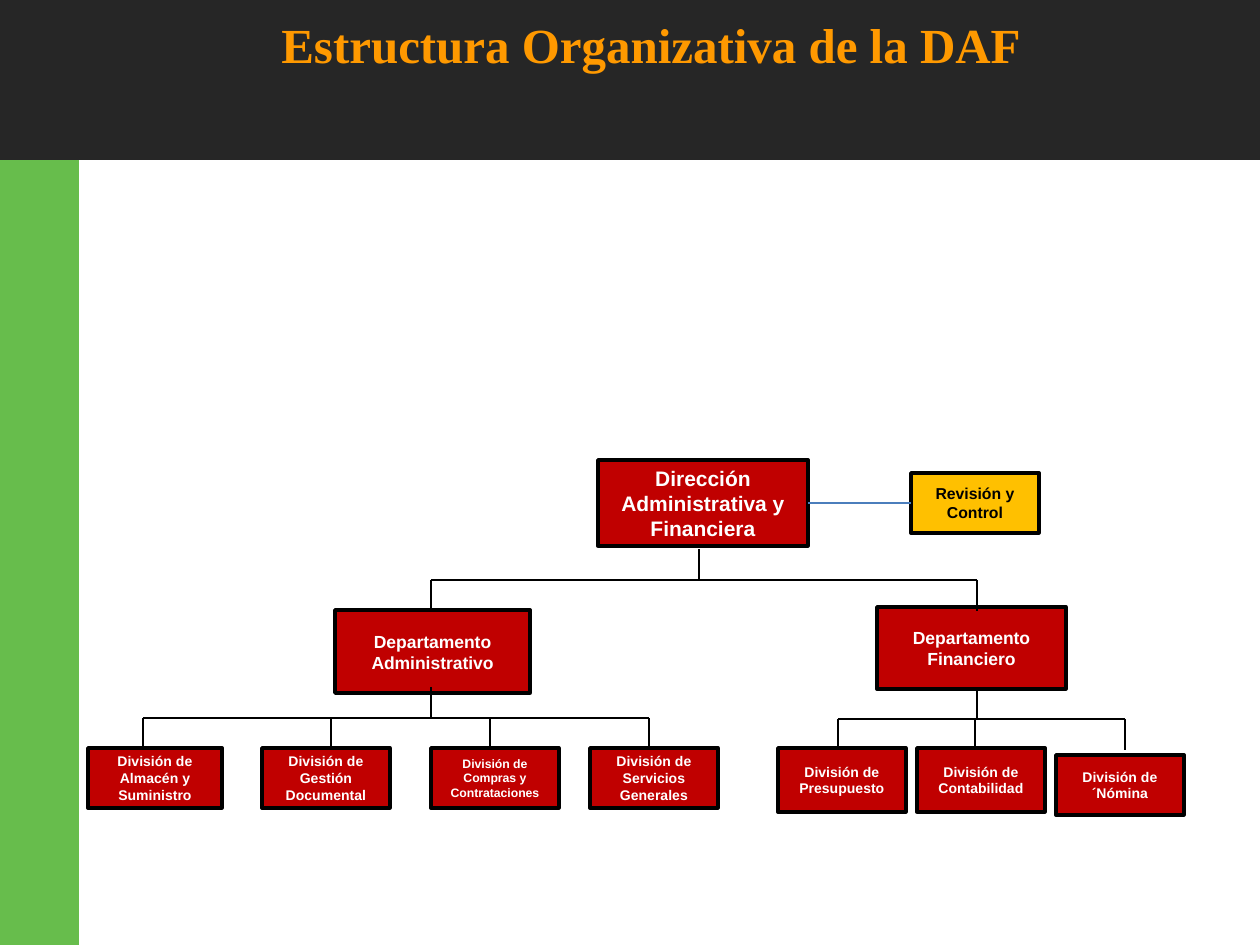
from lxml.etree import SubElement
from pptx import Presentation
from pptx.dml.color import RGBColor
from pptx.enum.shapes import MSO_CONNECTOR as Connector, MSO_SHAPE as Shape
from pptx.enum.text import MSO_ANCHOR as Anchor, MSO_AUTO_SIZE as AutoSize, PP_ALIGN as Align
from pptx.oxml.ns import qn
from pptx.util import Pt

EMU_PER_PX = 914400 / 126
WIDTH, HEIGHT = 1260, 945
TITLE_ONLY = 5
RED, AMBER, BLACK, WHITE = "C00000", "FFC000", "000000", "FFFFFF"


def px(value):
    return round(value * EMU_PER_PX)


def color(hex_string):
    return RGBColor.from_string(hex_string)


def write(frame, text, size, font="Arial", ink=WHITE, anchor=Anchor.MIDDLE, spacing=1.0):
    frame.word_wrap = True
    frame.auto_size = AutoSize.NONE
    frame.vertical_anchor = anchor
    paragraph = frame.paragraphs[0]
    paragraph.alignment = Align.CENTER
    paragraph.line_spacing = spacing
    run = paragraph.add_run()
    run.text = text
    run.font.name = font
    run.font.size = Pt(size)
    run.font.bold = True
    run.font.color.rgb = color(ink)


class OrgChart:
    """Holds the chart style and the slide being drawn on."""

    border_width = Pt(2)
    line_width = Pt(0.75)
    stem_height = 31

    def __init__(self, slide):
        self.slide = slide

    def band(self, left, top, width, height, fill):
        shape = self.slide.shapes.add_shape(
            Shape.RECTANGLE, px(left), px(top), px(width), px(height))
        shape.shadow.inherit = False
        shape.fill.solid()
        shape.fill.fore_color.rgb = color(fill)
        shape.line.fill.background()
        return shape

    def title(self, text, left, top, width, height):
        """Format the title placeholder and bring it in front of the bands."""
        title = self.slide.shapes.title
        title.left, title.top = px(left), px(top)
        title.width, title.height = px(width), px(height)
        write(title.text_frame, text, 28, font="Times New Roman", ink="FF9900",
              anchor=Anchor.TOP, spacing=0.9)
        self.slide.shapes.element.append(title.element)

    def box(self, text, left, top, width, height, size, fill=RED, ink=WHITE):
        shape = self.band(left, top, width, height, fill)
        shape.line.color.rgb = color(BLACK)
        shape.line.width = self.border_width
        write(shape.text_frame, text, size, ink=ink)
        return shape

    def line(self, start, end, ink=BLACK):
        connector = self.slide.shapes.add_connector(
            Connector.STRAIGHT, *map(px, start + end))
        connector.line.color.rgb = color(ink)
        connector.line.width = self.line_width
        SubElement(connector.element.spPr, qn("a:effectLst"))
        return connector

    def branch(self, rail, parent, children):
        """Draw a rail with one stem up to the parent and one down to each child."""
        self.line((parent, rail - self.stem_height), (parent, rail))
        self.line((children[0], rail), (children[-1], rail))
        for child in children:
            self.line((child, rail), (child, rail + self.stem_height))


def main():
    presentation = Presentation()
    presentation.slide_width, presentation.slide_height = px(WIDTH), px(HEIGHT)
    slide = presentation.slides.add_slide(presentation.slide_layouts[TITLE_ONLY])
    chart = OrgChart(slide)

    chart.band(0, 80, 79, HEIGHT - 80, "67BD4C")
    chart.band(0, 0, WIDTH, 160, "262626")
    chart.title("Estructura Organizativa de la DAF", 57, 15, 1188, 84)

    direction = chart.box("Dirección Administrativa y Financiera", 598, 460, 210, 86, 12)
    review = chart.box("Revisión y Control", 911, 473, 128, 60, 9, fill=AMBER, ink=BLACK)
    chart.box("Departamento Administrativo", 335, 610, 195, 83, 10)
    chart.box("Departamento Financiero", 877, 607, 189, 82, 10)

    divisions = [
        ("Almacén y Suministro", 88, 748, 134, 60, 8),
        ("Gestión Documental", 262, 748, 128, 60, 8),
        ("Compras y Contrataciones", 431, 748, 128, 60, 7),
        ("Servicios Generales", 590, 748, 128, 60, 8),
        ("Presupuesto", 778, 748, 128, 64, 8),
        ("Contabilidad", 917, 748, 128, 64, 8),
        ("´Nómina", 1056, 755, 128, 60, 8),
    ]
    for name, *place_and_size in divisions:
        chart.box(f"División de {name}", *place_and_size)

    chart.branch(580, 699, [431, 977])
    chart.branch(718, 431, [143, 331, 490, 649])
    chart.branch(719, 977, [838, 975, 1125])

    review_link = chart.line((808, 503), (911, 503), ink="4B7EBC")
    review_link.begin_connect(direction, 3)
    review_link.end_connect(review, 1)

    presentation.save("out.pptx")


if __name__ == "__main__":
    main()
